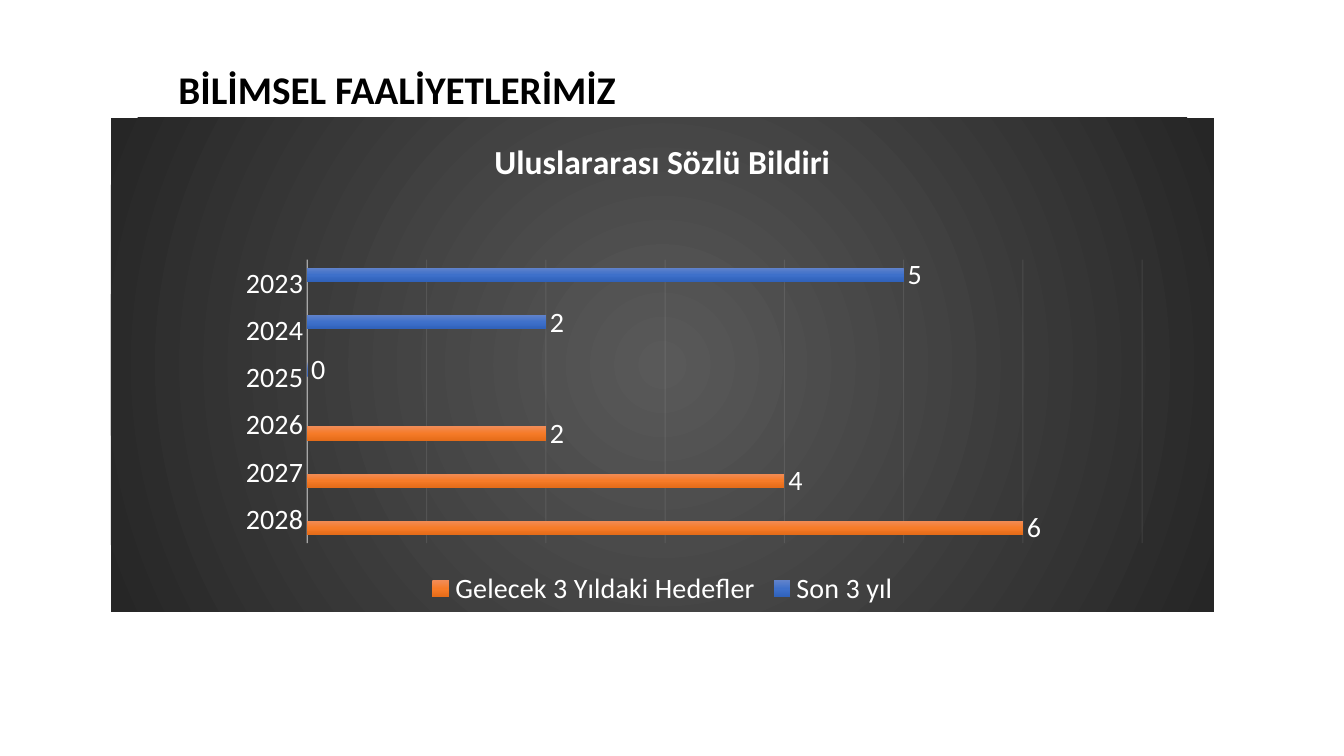
"""Build the slide on scientific activities with its bar chart of oral papers."""
from lxml import etree
from pptx import Presentation
from pptx.chart.data import CategoryChartData
from pptx.dml.color import RGBColor
from pptx.enum.chart import XL_CHART_TYPE as ChartType
from pptx.enum.chart import XL_LABEL_POSITION as LabelPosition
from pptx.enum.chart import XL_LEGEND_POSITION as LegendPosition
from pptx.enum.chart import XL_TICK_LABEL_POSITION as TickLabels
from pptx.enum.chart import XL_TICK_MARK as TickMark
from pptx.enum.text import MSO_ANCHOR as Anchor
from pptx.enum.text import PP_ALIGN as Align
from pptx.oxml import parse_xml
from pptx.oxml.ns import nsdecls, qn
from pptx.util import Inches, Pt

HEADING = "BİLİMSEL FAALİYETLERİMİZ"
CHART_TITLE = "Uluslararası Sözlü Bildiri"
YEARS = ["2023", "2024", "2025", "2026", "2027", "2028"]
BLACK = RGBColor(0x00, 0x00, 0x00)
WHITE = RGBColor(0xFF, 0xFF, 0xFF)
PALE = RGBColor(0xF2, 0xF2, 0xF2)
GREYS = [RGBColor(0x59, 0x59, 0x59), RGBColor(0x26, 0x26, 0x26)]
BLUES = [RGBColor(0x61, 0x83, 0xCB), RGBColor(0x3E, 0x70, 0xCA), RGBColor(0x30, 0x62, 0xBB)]
ORANGES = [RGBColor(0xF1, 0x8C, 0x57), RGBColor(0xF6, 0x7B, 0x28), RGBColor(0xE5, 0x6C, 0x19)]
SERIES = [
    ("Son 3 yıl", [5, 2, 0, None, None, None], BLUES),
    ("Gelecek 3 Yıldaki Hedefler", [None, None, None, 2, 4, 6], ORANGES),
]
FONT = "Calibri"
HEADING_BOX = [Inches(n) for n in (1.67, 0.4, 8.08, 1.02)]
CHART_BOX = [Inches(n) for n in (1.1, 1.17, 10.94, 4.9)]
PLOT_SHARES = {"x": 0.178, "y": 0.287, "w": 0.757, "h": 0.574}
DOWNWARD = '<a:lin ang="5400000" scaled="0"/>'
RADIAL = '<a:path path="circle"><a:fillToRect l="50000" t="50000" r="50000" b="50000"/></a:path>'


def gradient(colors, direction):
    step = 100000 // (len(colors) - 1)
    stops = "".join(
        f'<a:gs pos="{i * step}"><a:srgbClr val="{color}"/></a:gs>'
        for i, color in enumerate(colors)
    )
    return parse_xml(
        f'<a:gradFill {nsdecls("a")} rotWithShape="1"><a:gsLst>{stops}</a:gsLst>{direction}</a:gradFill>'
    )


def style_line(line, width, opacity):
    line.width = Pt(width)
    line.color.rgb = PALE
    color = line._get_or_add_ln().find(".//" + qn("a:srgbClr"))
    etree.SubElement(color, qn("a:alpha"), val=str(opacity * 1000))


def style_font(font, size, color, bold):
    font.name, font.size, font.bold = FONT, Pt(size), bold
    font.color.rgb = color


def add_heading(slide):
    title = slide.shapes.title
    title.left, title.top, title.width, title.height = HEADING_BOX
    frame = title.text_frame
    frame.text = HEADING
    frame.word_wrap = True
    frame.vertical_anchor = Anchor.MIDDLE
    para = frame.paragraphs[0]
    para.alignment = Align.LEFT
    para.line_spacing = 0.9
    style_font(para.font, 28, BLACK, True)


def style_axes(chart):
    years = chart.category_axis
    years.reverse_order = True
    years.major_tick_mark = years.minor_tick_mark = TickMark.NONE
    years.tick_label_position = TickLabels.NEXT_TO_AXIS
    style_line(years.format.line, 1, 54)
    values = chart.value_axis
    values.visible = False
    values.minimum_scale, values.maximum_scale, values.major_unit = 0, 7, 1
    values.has_major_gridlines = True
    style_line(values.major_gridlines.format.line, 0.75, 10)


def style_series(plot):
    plot.gap_width, plot.overlap = 115, -20
    plot.vary_by_categories = False
    for series, (_, _, colors) in zip(plot.series, SERIES):
        series._element.get_or_add_spPr().append(gradient(colors, DOWNWARD))
        labels = series.data_labels
        labels.show_value = True
        labels.position = LabelPosition.OUTSIDE_END
        style_font(labels.font, 20, WHITE, False)


def place_plot(space):
    layout = etree.Element(qn("c:layout"))
    manual = etree.SubElement(layout, qn("c:manualLayout"))
    etree.SubElement(manual, qn("c:layoutTarget"), val="inner")
    for side in "xy":
        etree.SubElement(manual, qn(f"c:{side}Mode"), val="edge")
    for side, share in PLOT_SHARES.items():
        etree.SubElement(manual, qn(f"c:{side}"), val=str(share))
    space.find(".//" + qn("c:plotArea")).insert(0, layout)


def fill_background(space):
    properties = etree.Element(qn("c:spPr"))
    properties.append(gradient(GREYS, RADIAL))
    outline = etree.SubElement(properties, qn("a:ln"))
    etree.SubElement(outline, qn("a:noFill"))
    space.find(qn("c:txPr")).addprevious(properties)


def add_bar_chart(slide):
    data = CategoryChartData()
    data.categories = YEARS
    for name, values, _ in SERIES:
        data.add_series(name, values)
    chart = slide.shapes.add_chart(ChartType.BAR_CLUSTERED, *CHART_BOX, data).chart
    style_font(chart.font, 20, WHITE, False)
    chart.has_title = True
    chart.chart_title.include_in_layout = False
    frame = chart.chart_title.text_frame
    frame.text = CHART_TITLE
    style_font(frame.paragraphs[0].font, 24, WHITE, True)
    chart.has_legend = True
    chart.legend.position = LegendPosition.BOTTOM
    chart.legend.include_in_layout = False
    style_axes(chart)
    style_series(chart.plots[0])
    place_plot(chart._chartSpace)
    fill_background(chart._chartSpace)


def main():
    deck = Presentation()
    deck.slide_width, deck.slide_height = Inches(13.33), Inches(7.5)
    slide = deck.slides.add_slide(deck.slide_layouts[5])
    add_heading(slide)
    add_bar_chart(slide)
    deck.save("out.pptx")


if __name__ == "__main__":
    main()
